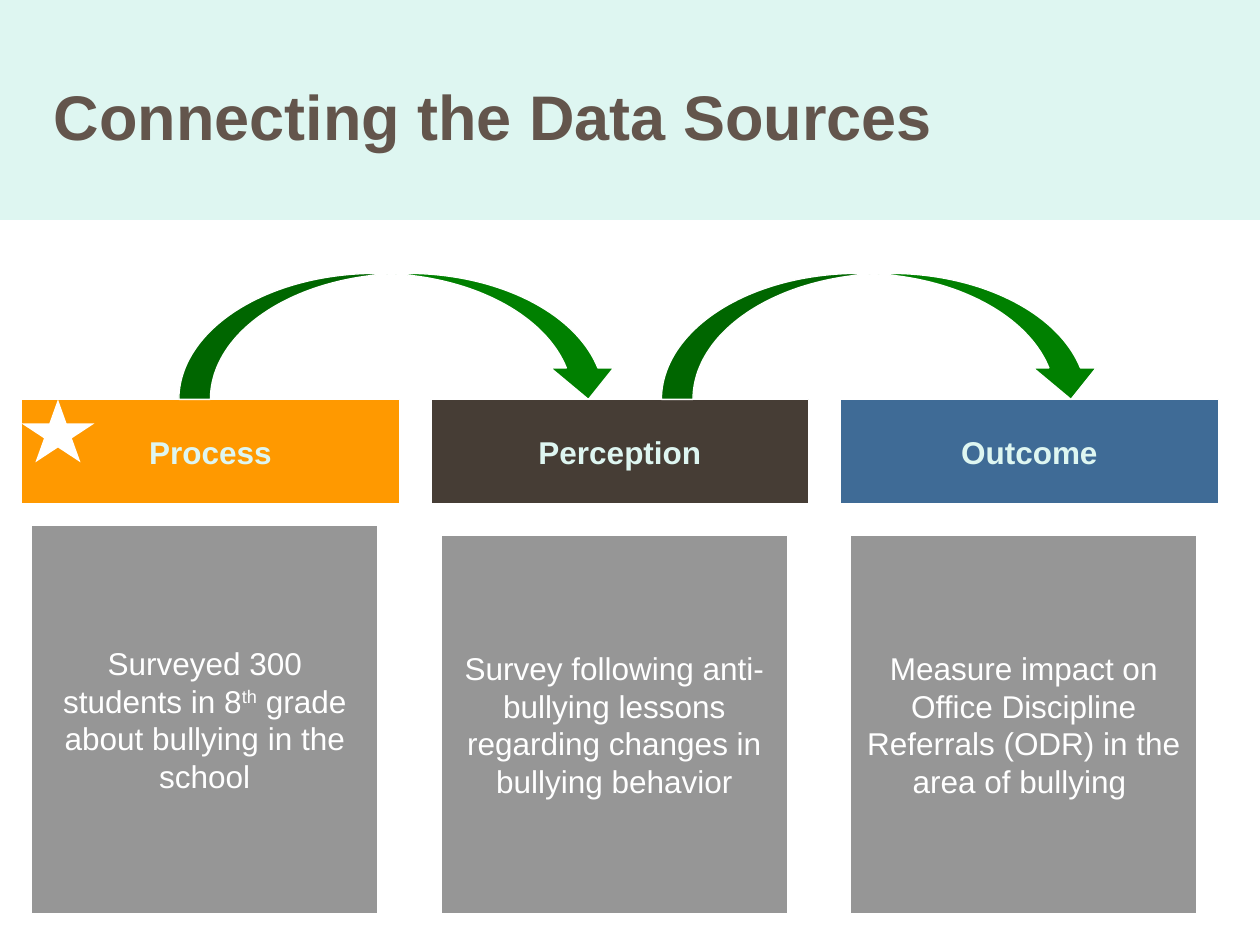
from dataclasses import dataclass

from pptx import Presentation
from pptx.dml.color import RGBColor
from pptx.enum.shapes import MSO_SHAPE
from pptx.enum.text import MSO_ANCHOR, PP_ALIGN
from pptx.util import Inches, Pt


@dataclass(frozen=True)
class Theme:
    font: str = "Arial"
    title_size: int = 36
    body_size: int = 18
    line_width: float = 0.75
    mint: str = "DEF6F1"
    white: str = "FFFFFF"
    brown: str = "63554C"
    orange: str = "FF9900"
    dark: str = "463D35"
    blue: str = "3F6B96"
    green: str = "008000"
    gray: str = "969696"


class SlideBuilder:
    """Draws styled elements on the current slide."""

    def __init__(self, prs, theme):
        self.theme = theme
        self.slide = prs.slides.add_slide(prs.slide_layouts[6])

    def background(self, color):
        fill = self.slide.background.fill
        fill.solid()
        fill.fore_color.rgb = RGBColor.from_string(color)

    def shape(self, kind, box, color, outlined=True):
        sp = self.slide.shapes.add_shape(kind, *map(Inches, box))
        sp.shadow.inherit = False
        sp.fill.solid()
        sp.fill.fore_color.rgb = RGBColor.from_string(color)
        if outlined:
            sp.line.color.rgb = RGBColor.from_string(self.theme.white)
            sp.line.width = Pt(self.theme.line_width)
        else:
            sp.line.fill.background()
        return sp

    def add_text(self, sp, runs, size, color, bold=False, align=PP_ALIGN.CENTER):
        tf = sp.text_frame
        tf.word_wrap = True
        tf.vertical_anchor = MSO_ANCHOR.MIDDLE
        p = tf.paragraphs[0]
        p.alignment = align
        for text, raised in runs:
            r = p.add_run()
            r.text = text
            r.font.name = self.theme.font
            r.font.size = Pt(size)
            r.font.bold = bold
            r.font.color.rgb = RGBColor.from_string(color)
            if raised:
                r._r.get_or_add_rPr().set("baseline", "30000")

    def title(self, text, box):
        sp = self.slide.shapes.add_textbox(*map(Inches, box))
        self.add_text(sp, [(text, False)], self.theme.title_size,
                      self.theme.brown, True, PP_ALIGN.LEFT)

    def panel(self, runs, box, fill, color, bold=False):
        sp = self.shape(MSO_SHAPE.RECTANGLE, box, fill)
        self.add_text(sp, runs, self.theme.body_size, color, bold)


def main():
    theme = Theme()
    prs = Presentation()
    prs.slide_width, prs.slide_height = Inches(10), Inches(7.5)
    s = SlideBuilder(prs, theme)

    s.background(theme.mint)
    s.shape(MSO_SHAPE.RECTANGLE, (0, 1.75, 10, 5.75), theme.white)
    s.title("Connecting the Data Sources", (0.33, 0.33, 9.33, 1.17))

    columns = [
        ("Process", theme.orange, 4.17,
         [("Surveyed 300 students in 8", False), ("th", True),
          (" grade about bullying in the school", False)]),
        ("Perception", theme.dark, 4.25,
         [("Survey following anti-bullying lessons regarding changes in "
           "bullying behavior", False)]),
        ("Outcome", theme.blue, 4.25,
         [("Measure impact on Office Discipline Referrals (ODR) in the "
           "area of bullying ", False)]),
    ]
    pitch, bottom = 3.25, 7.25
    for i, (heading, color, top, body) in enumerate(columns):
        s.panel([(heading, False)], (0.17 + i * pitch, 3.17, 3, 0.83),
                color, theme.mint, True)
        s.panel(body, (0.25 + i * pitch, top, 2.75, bottom - top),
                theme.gray, theme.white)

    for left in (1.42, 5.25):
        s.shape(MSO_SHAPE.CURVED_DOWN_ARROW, (left, 2.17, 3.5, 1), theme.green)
    s.shape(MSO_SHAPE.STAR_5_POINT, (0.17, 3.17, 0.58, 0.5), theme.white, False)

    prs.save("out.pptx")


if __name__ == "__main__":
    main()
